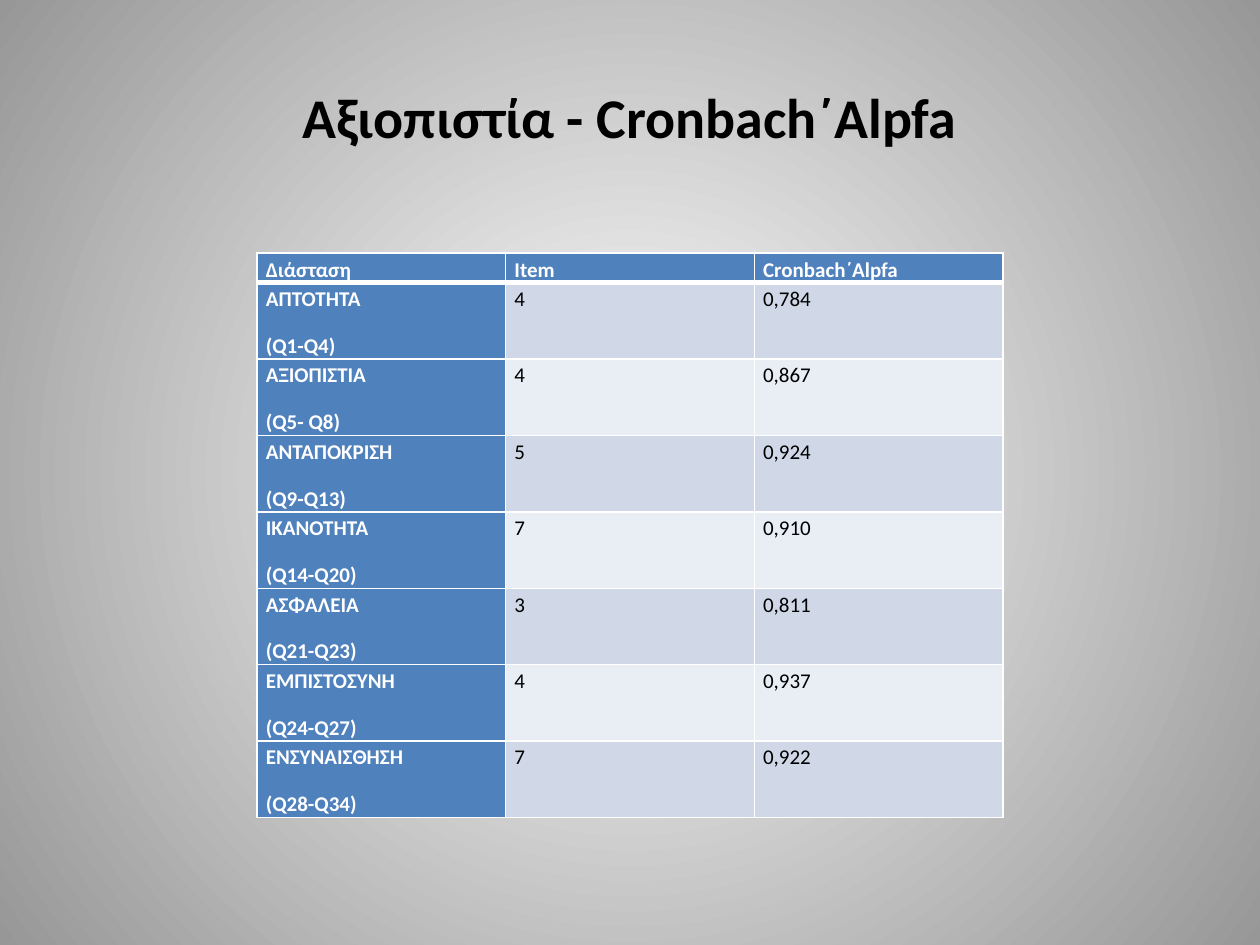
import dataclasses

import pptx
import pptx.dml.color
import pptx.enum.text
import pptx.oxml
import pptx.oxml.ns
import pptx.util

ALIGN = pptx.enum.text.PP_ALIGN


@dataclasses.dataclass(frozen=True)
class Theme:
    font: str = "Calibri"
    title_size: int = 32
    cell_size: int = 12
    ink: str = "000000"
    light: str = "FFFFFF"
    accent: str = "4F81BD"
    bands: tuple = ("D0D8E8", "E9EDF4")
    glow: tuple = ("FFFFFF", "979797")
    rule: int = 1
    header_rule: int = 3


def apply(target, formats):
    for name, value in formats.items():
        setattr(target, name, value)


def rgb(value):
    return pptx.dml.color.RGBColor.from_string(value)


class Deck:
    """Holds the theme and the current slide; lengths are shares of the slide."""

    def __init__(self, theme, width=10, height=7.5):
        self.theme = theme
        self.show = pptx.Presentation()
        apply(self.show, {"slide_width": pptx.util.Inches(width),
                          "slide_height": pptx.util.Inches(height)})
        self.slide = self.show.slides.add_slide(self.show.slide_layouts[5])

    def across(self, share):
        return round(self.show.slide_width * share)

    def down(self, share):
        return round(self.show.slide_height * share)

    def background(self):
        """Circular gradient from the middle of the slide to its corners."""
        fill = self.slide.background.fill
        fill.gradient()
        for stop, colour, position in zip(fill.gradient_stops, self.theme.glow, (0, 1)):
            stop.color.rgb = rgb(colour)
            stop.position = position
        gradient = next(self.slide.element.iter(pptx.oxml.ns.qn("a:gradFill")))
        gradient.remove(gradient.find(pptx.oxml.ns.qn("a:lin")))
        gradient.append(pptx.oxml.parse_xml(
            f'<a:path {pptx.oxml.ns.nsdecls("a")} path="circle">'
            '<a:fillToRect l="50000" t="50000" r="50000" b="50000"/></a:path>'))

    def text(self, frame, lines, size, colour, bold, paragraph_format):
        frame.text = "\n".join(lines)
        for paragraph in frame.paragraphs:
            apply(paragraph, paragraph_format)
            for run in paragraph.runs:
                apply(run.font, {"name": self.theme.font, "bold": bold,
                                 "size": pptx.util.Pt(size)})
                run.font.color.rgb = rgb(colour)

    def title(self, wording):
        heading = self.slide.shapes.title
        apply(heading, {"left": self.across(0.05), "top": self.down(0.04),
                        "width": self.across(0.9), "height": self.down(1 / 6)})
        heading.text_frame.vertical_anchor = pptx.enum.text.MSO_ANCHOR.MIDDLE
        self.text(heading.text_frame, [wording], self.theme.title_size,
                  self.theme.ink, True, {"alignment": ALIGN.CENTER})

    def borders(self, cell, row):
        widths = dict.fromkeys("LRTB", self.theme.rule)
        if row < 2:
            widths["B" if row == 0 else "T"] = self.theme.header_rule
        properties = cell._tc.get_or_add_tcPr()
        for side, width in widths.items():
            properties.append(pptx.oxml.parse_xml(
                f'<a:ln{side} {pptx.oxml.ns.nsdecls("a")} w="{pptx.util.Pt(width)}">'
                f'<a:solidFill><a:srgbClr val="{self.theme.light}"/></a:solidFill>'
                f'</a:ln{side}>'))

    def cell(self, cell, lines, row, column):
        strong = row == 0 or column == 0
        theme = self.theme
        apply(cell, {"margin_left": pptx.util.Inches(0.07),
                     "margin_right": pptx.util.Inches(0.07),
                     "margin_top": 0, "margin_bottom": 0})
        self.borders(cell, row)
        cell.fill.solid()
        cell.fill.fore_color.rgb = rgb(theme.accent if strong else theme.bands[(row - 1) % 2])
        self.text(cell.text_frame, lines, theme.cell_size,
                  theme.light if strong else theme.ink, strong,
                  {"alignment": ALIGN.JUSTIFY, "line_spacing": 1.15,
                   "space_after": pptx.util.Pt(10)})

    def table(self, rows, left, top, width, header_height, row_height):
        heights = [header_height] + [row_height] * (len(rows) - 1)
        grid = self.slide.shapes.add_table(
            len(rows), len(rows[0]), self.across(left), self.down(top),
            self.across(width), self.down(sum(heights))).table
        apply(grid, {"first_row": False, "horz_banding": False})
        for row, (entries, height) in enumerate(zip(rows, heights)):
            grid.rows[row].height = self.down(height)
            for column, lines in enumerate(entries):
                self.cell(grid.cell(row, column), lines, row, column)


HEADER = ("Διάσταση", "Item", "Cronbach΄Alpfa")
DIMENSIONS = (
    ("ΑΠΤΟΤΗΤΑ", "(Q1-Q4)", "4", "0,784"),
    ("ΑΞΙΟΠΙΣΤΙΑ", "(Q5- Q8)", "4", "0,867"),
    ("ΑΝΤΑΠΟΚΡΙΣΗ", "(Q9-Q13)", "5", "0,924"),
    ("ΙΚΑΝΟΤΗΤΑ", "(Q14-Q20)", "7", "0,910"),
    ("ΑΣΦΑΛΕΙΑ", "(Q21-Q23)", "3", "0,811"),
    ("ΕΜΠΙΣΤΟΣΥΝΗ", "(Q24-Q27)", "4", "0,937"),
    ("ΕΝΣΥΝΑΙΣΘΗΣΗ", "(Q28-Q34)", "7", "0,922"),
)


def main():
    deck = Deck(Theme())
    deck.background()
    deck.title("Αξιοπιστία - Cronbach΄Alpfa")
    rows = [[[label] for label in HEADER]]
    rows += [[[name, questions], [items], [alpha]]
             for name, questions, items, alpha in DIMENSIONS]
    deck.table(rows, left=0.204, top=0.268, width=0.592,
               header_height=0.03, row_height=0.08)
    deck.show.save("out.pptx")


if __name__ == "__main__":
    main()
